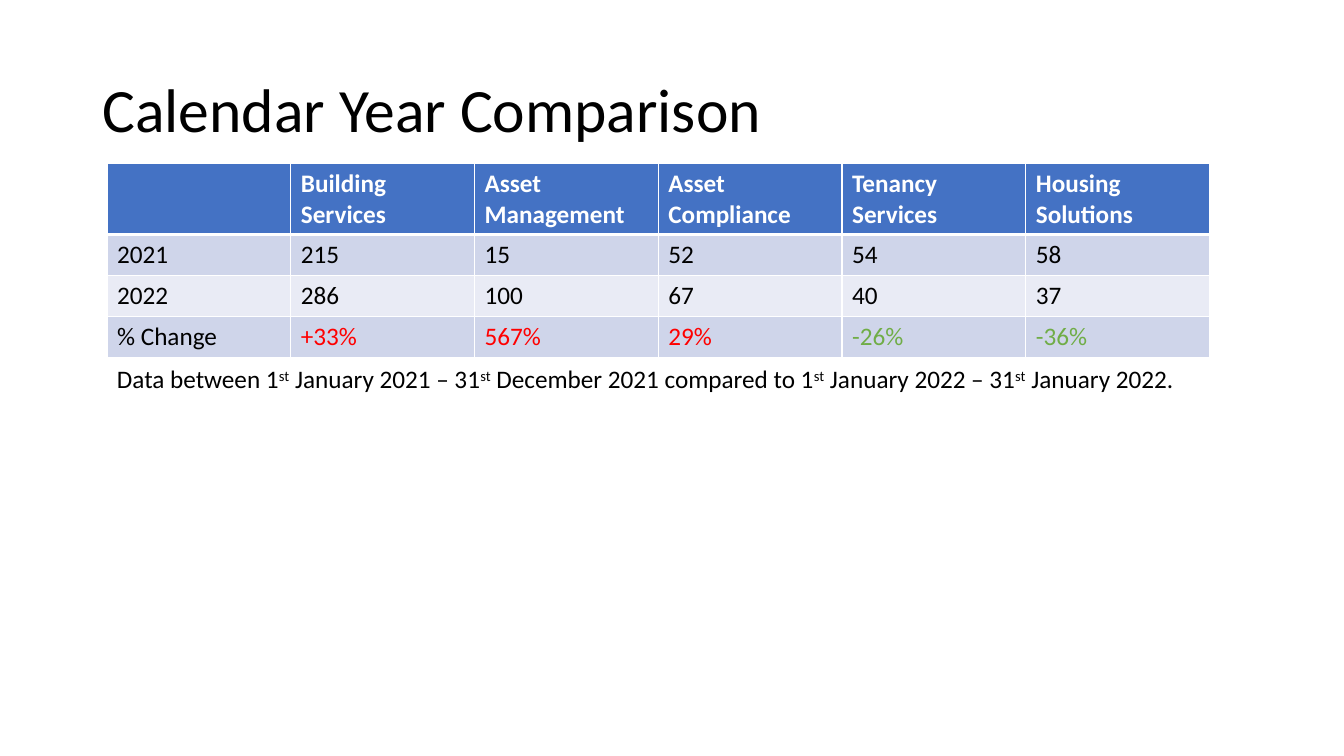
from dataclasses import dataclass

import lxml.etree
import pptx
import pptx.dml.color
import pptx.enum.text
import pptx.oxml.ns
import pptx.util

PX = 9525


@dataclass(frozen=True)
class Theme:
    font: str = "Calibri"
    title_size: int = 44
    body_size: int = 18
    text: str = "000000"
    white: str = "FFFFFF"
    header: str = "4472C4"
    bands: tuple = ("CFD5EA", "E9EBF5")
    rise: str = "FF0000"
    fall: str = "70AD47"


def rgb(value):
    return pptx.dml.color.RGBColor.from_string(value)


class Deck:
    def __init__(self, theme, width, height):
        self.theme = theme
        self.prs = pptx.Presentation()
        self.prs.slide_width, self.prs.slide_height = width * PX, height * PX
        self.s = self.prs.slides.add_slide(self.prs.slide_layouts[5])

    def style(self, p, size, color, bold=False):
        for r in p.runs:
            r.font.name = self.theme.font
            r.font.size = pptx.util.Pt(size)
            r.font.bold = bold
            r.font.color.rgb = rgb(color)

    def title(self, text, x, y, w, h):
        sp = self.s.shapes.title
        sp.left, sp.top, sp.width, sp.height = (v * PX for v in (x, y, w, h))
        tf = sp.text_frame
        tf.text = text
        tf.vertical_anchor = pptx.enum.text.MSO_ANCHOR.MIDDLE
        p = tf.paragraphs[0]
        p.alignment = pptx.enum.text.PP_ALIGN.LEFT
        p.line_spacing = 0.9
        self.style(p, self.theme.title_size, self.theme.text)

    def note(self, parts, x, y, w, h):
        tf = self.s.shapes.add_textbox(*(v * PX for v in (x, y, w, h))).text_frame
        tf.word_wrap = True
        p = tf.paragraphs[0]
        p.line_spacing = 0.9
        p.space_before = pptx.util.Pt(10)
        for text in parts:
            r = p.add_run()
            r.text = text
            if text == "st":
                r._r.get_or_add_rPr().set("baseline", "30000")
        self.style(p, self.theme.body_size, self.theme.text)

    def border(self, cell, side, points):
        qn = pptx.oxml.ns.qn
        ln = lxml.etree.SubElement(cell._tc.get_or_add_tcPr(), qn(f"a:ln{side}"))
        ln.set("w", str(pptx.util.Pt(points)))
        fill = lxml.etree.SubElement(ln, qn("a:solidFill"))
        lxml.etree.SubElement(fill, qn("a:srgbClr")).set("val", self.theme.white)

    def text_color(self, i, text):
        if i == 0:
            return self.theme.white
        if text.startswith("-"):
            return self.theme.fall
        return self.theme.rise if text.endswith("%") else self.theme.text

    def table(self, rows, x, y, col_w, header_h, row_h):
        cols = len(rows[0])
        height = header_h + row_h * (len(rows) - 1)
        frame = self.s.shapes.add_table(
            len(rows), cols, x * PX, y * PX, col_w * cols * PX, height * PX)
        table = frame.table
        for col in table.columns:
            col.width = col_w * PX
        for i, values in enumerate(rows):
            table.rows[i].height = (row_h if i else header_h) * PX
            for j, text in enumerate(values):
                cell = table.cell(i, j)
                cell.text = text
                for side in "LRTB":
                    heavy = (i, side) in ((0, "B"), (1, "T"))
                    self.border(cell, side, 3 if heavy else 1)
                cell.fill.solid()
                band = self.theme.bands[(i - 1) % 2] if i else self.theme.header
                cell.fill.fore_color.rgb = rgb(band)
                self.style(cell.text_frame.paragraphs[0], self.theme.body_size,
                           self.text_color(i, text), bold=i == 0)


def main():
    deck = Deck(Theme(), 1280, 720)
    deck.title("Calendar Year Comparison", 88, 38, 1104, 139)
    deck.note(["Data between 1", "st", " January 2021 – 31", "st",
               " December 2021 compared to 1", "st", " January 2022 – 31", "st",
               " January 2022."], 102, 345, 1104, 69)
    deck.table([
        ["", "Building Services", "Asset Management", "Asset Compliance",
         "Tenancy Services", "Housing Solutions"],
        ["2021", "215", "15", "52", "54", "58"],
        ["2022", "286", "100", "67", "40", "37"],
        ["% Change", "+33%", "567%", "29%", "-26%", "-36%"],
    ], x=102, y=156, col_w=175, header_h=67, row_h=39)
    deck.prs.save("out.pptx")


if __name__ == "__main__":
    main()
